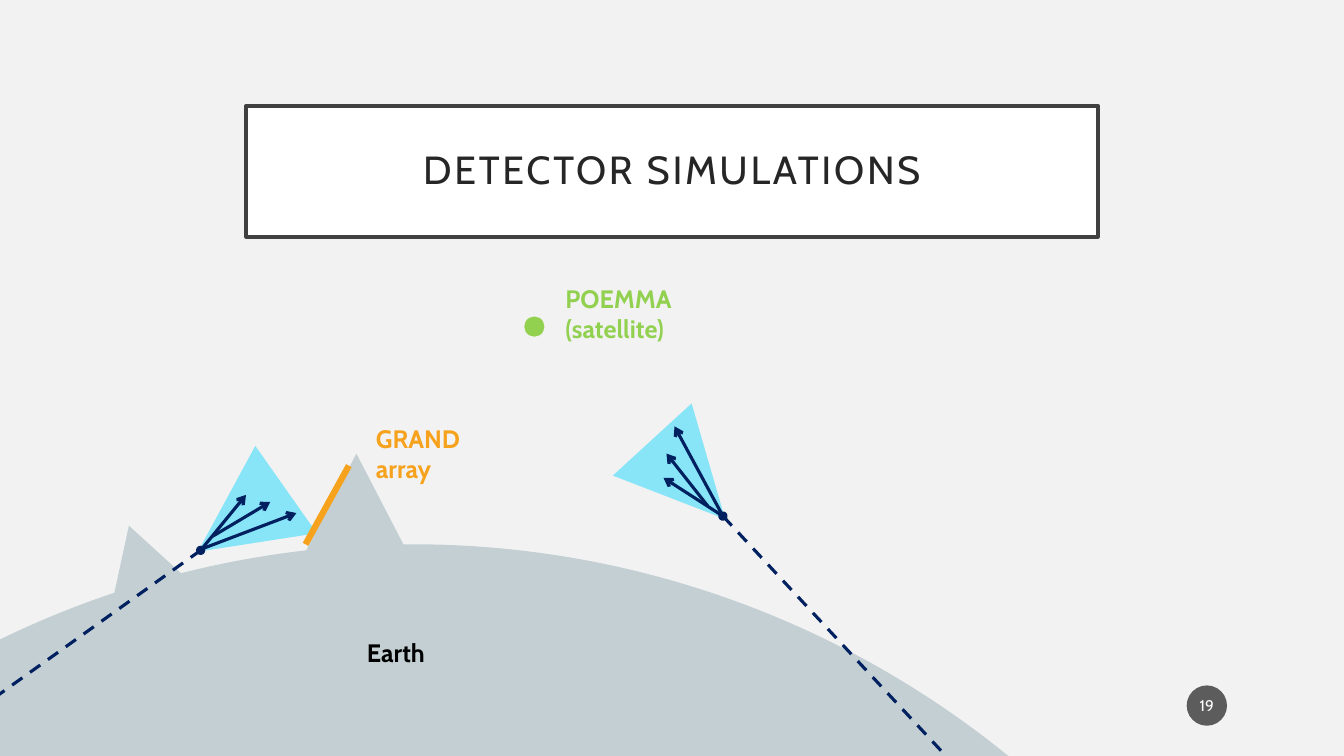
from pptx import Presentation
from pptx import util as u
from pptx.dml.color import RGBColor
from pptx.enum import dml, shapes, text
from pptx.oxml.ns import qn
from lxml import etree

HUES = {"back": "F2F2F2", "land": "C3CFD3", "cone": "88E5F8", "track": "002060",
        "grand": "F6A21D", "sat": "92D050", "white": "FFFFFF", "edge": "404040",
        "title": "262626", "badge": "1D1D1D", "black": "000000"}
FONT = "Cabin"
WIDE, HIGH = 13.33, 7.5
OVAL = shapes.MSO_SHAPE.OVAL
RECT = shapes.MSO_SHAPE.RECTANGLE
PEAK = shapes.MSO_SHAPE.ISOSCELES_TRIANGLE

EARTH = (-5.26, 5.4, 18.71, 18.71)
TITLE = ("DETECTOR SIMULATIONS", (2.44, 1.05, 8.45, 1.3))
BADGE = ("19", (11.77, 6.8, 0.4, 0.4))
HILL = (0.83, 5.19, 1.22, 1.06)
MOUNT = (2.97, 4.5, 1.13, 1.09)
ARRAY = ((3.03, 5.4), (3.46, 4.62))
SAT = (5.2, 3.14, 0.2, 0.2)
SHOWERS = [
    {"cone": (1.87, 4.63, 1.06, 1.07), "turn": 234.8,
     "path": ((-2.89, 8.95), (1.99, 5.46)),
     "rays": [((1.99, 5.46), (2.44, 4.91)),
              ((2.11, 5.32), (2.68, 4.98)),
              ((1.99, 5.45), (2.94, 5.09))]},
    {"cone": (6.3, 4.22, 1.06, 1.07), "turn": 137.5,
     "path": ((11.26, 9.52), (7.17, 5.12)),
     "rays": [((7.17, 5.12), (6.58, 4.74)),
              ((7.02, 5.02), (6.61, 4.5)),
              ((7.17, 5.12), (6.69, 4.23))]},
]
LABELS = [("GRAND\narray", (3.63, 4.15, 1.55, 0.71), "grand"),
          ("POEMMA\n(satellite)", (5.51, 2.76, 1.55, 0.71), "sat"),
          ("Earth", (3.54, 6.27, 1.55, 0.4), "black")]


def rgb(hue):
    return RGBColor.from_string(HUES[hue])


def inch(vals):
    return [u.Inches(v) for v in vals]


def shape(home, kind, box, hue, turn=0):
    item = home.add_shape(kind, *inch(box))
    item.shadow.inherit = False
    item.fill.solid()
    item.fill.fore_color.rgb = rgb(hue)
    item.line.fill.background()
    item.rotation = turn
    return item


def line(home, ends, hue, width, tip=None, dash=False):
    start, stop = ends
    item = home.add_connector(shapes.MSO_CONNECTOR.STRAIGHT, *inch(start + stop))
    item.line.color.rgb = rgb(hue)
    item.line.width = u.Pt(width)
    if dash:
        item.line.dash_style = dml.MSO_LINE.DASH
    if tip:
        etree.SubElement(item.line._get_or_add_ln(), qn("a:tailEnd"), type=tip)
    etree.SubElement(item._element.spPr, qn("a:effectLst"))


def write(item, words, size, hue, bold=False, align=text.PP_ALIGN.LEFT):
    frame = item.text_frame
    frame.text = words
    frame.word_wrap = True
    for para in frame.paragraphs:
        para.alignment = align
        for run in para.runs:
            run.font.name = FONT
            run.font.size = u.Pt(size)
            run.font.bold = bold
            run.font.color.rgb = rgb(hue)
    return frame


def inset(frame, side, top):
    frame.margin_left = frame.margin_right = u.Inches(side)
    frame.margin_top = frame.margin_bottom = u.Inches(top)
    frame.vertical_anchor = text.MSO_ANCHOR.MIDDLE


def head(home):
    words, box = TITLE
    item = shape(home, RECT, box, "white")
    item.line.color.rgb = rgb("edge")
    item.line.width = u.Pt(2.5)
    frame = write(item, words, 28, "title", align=text.PP_ALIGN.CENTER)
    inset(frame, 0.2, 0.2)
    para = frame.paragraphs[0]
    para.line_spacing = 0.9
    para.runs[0].font._element.set("spc", "200")


def badge(home):
    words, box = BADGE
    item = shape(home, OVAL, box, "badge")
    tint = item._element.spPr.find(qn("a:solidFill"))[0]
    etree.SubElement(tint, qn("a:alpha"), val="70000")
    inset(write(item, words, 11, "white", align=text.PP_ALIGN.CENTER), 0.02, 0.05)


def shower(home, part):
    group = home.add_group_shape().shapes
    shape(group, PEAK, part["cone"], "cone", part["turn"])
    line(group, part["path"], "track", 2.25, "oval", True)
    for ray in part["rays"]:
        line(group, ray, "track", 2.25, "arrow")


def main():
    deck = Presentation()
    deck.slide_width, deck.slide_height = inch((WIDE, HIGH))
    slide = deck.slides.add_slide(deck.slide_layouts[6])
    slide.background.fill.solid()
    slide.background.fill.fore_color.rgb = rgb("back")
    home = slide.shapes
    shape(home, OVAL, EARTH, "land")
    head(home)
    badge(home)
    shape(home, PEAK, HILL, "land", 342.3)
    for part in SHOWERS:
        shower(home, part)
    shape(home, PEAK, MOUNT, "land")
    line(home, ARRAY, "grand", 4.5)
    shape(home, OVAL, SAT, "sat")
    for words, box, hue in LABELS:
        frame = write(home.add_textbox(*inch(box)), words, 18, hue, True)
        frame.auto_size = text.MSO_AUTO_SIZE.SHAPE_TO_FIT_TEXT
    deck.save("out.pptx")


if __name__ == "__main__":
    main()
